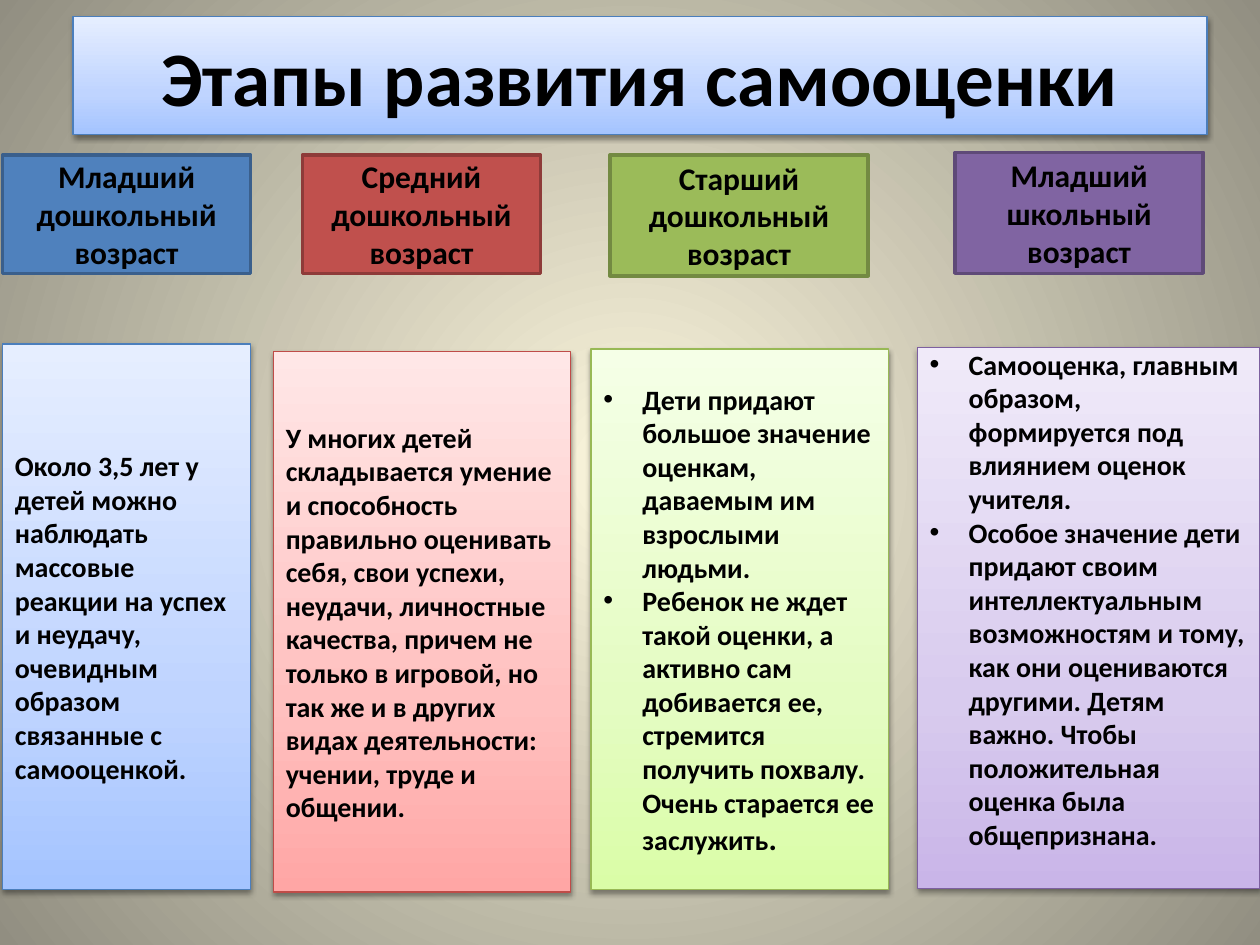
from lxml import etree
from pptx import Presentation
from pptx.dml.color import RGBColor
from pptx.enum.shapes import MSO_SHAPE
from pptx.enum.text import MSO_ANCHOR, PP_ALIGN
from pptx.oxml.ns import qn
from pptx.util import Inches, Pt

RECTANGLE = MSO_SHAPE.RECTANGLE
MIDDLE = MSO_ANCHOR.MIDDLE
CENTER = PP_ALIGN.CENTER
LEFT = PP_ALIGN.LEFT

FONT = "Calibri"
TITLE_ONLY = 5
BULLET_INDENT = Inches(0.31)
BLACK = RGBColor(0x00, 0x00, 0x00)
BLUE_EDGE = RGBColor(0x4B, 0x7E, 0xBC)


def color(value):
    return RGBColor.from_string(value)


BACKGROUND_STOPS = ((0, color("FCF7DD")), (100, color("918E81")))
BLUE_STOPS = ((0, color("A4C4FF")), (35, color("BFD4FF")), (100, color("E6EEFF")))
RED_STOPS = ((0, color("FFA6A5")), (35, color("FFC0BF")), (100, color("FFE7E7")))
GREEN_STOPS = ((0, color("DAFDA7")), (35, color("E4FCC2")), (100, color("F5FFE7")))
PURPLE_STOPS = ((0, color("C9B5E8")), (35, color("D8CBEE")), (100, color("F0EAF9")))

HEADERS = (
    ((0.02, 1.23, 1.97, 0.94), "Младший дошкольный возраст", color("4F81BD"), color("3A5F8C")),
    ((2.4, 1.23, 1.89, 0.94), "Средний дошкольный возраст", color("C0504D"), color("8E3B39")),
    ((4.84, 1.23, 2.05, 0.96), "Старший дошкольный возраст", color("9BBB59"), color("738A42")),
    ((7.58, 1.21, 1.97, 0.96), "Младший школьный возраст", color("8064A2"), color("5F4A78")),
)

YOUNGER_PRESCHOOL = (
    "Около 3,5 лет у детей можно наблюдать массовые реакции на успех и неудачу, "
    "очевидным образом связанные с самооценкой.",
)
MIDDLE_PRESCHOOL = (
    "У многих детей",
    "складывается умение и способность правильно оценивать себя, свои успехи, неудачи, "
    "личностные качества, причем не только в игровой, но так же и в других видах "
    "деятельности: учении, труде и общении.",
)
OLDER_PRESCHOOL = (
    "Дети придают большое значение оценкам, даваемым им взрослыми людьми.",
    "Ребенок не ждет такой оценки, а активно сам добивается ее, стремится получить "
    "похвалу. Очень старается ее заслужить",
)
YOUNGER_SCHOOL = (
    "Самооценка, главным образом, формируется под влиянием оценок учителя.",
    "Особое значение дети придают своим интеллектуальным возможностям и тому, как они "
    "оцениваются другими. Детям важно. Чтобы положительная оценка была общепризнана.",
)


def add_child(parent, tag, **attributes):
    return etree.SubElement(parent, qn(tag), {key: str(value) for key, value in attributes.items()})


def set_gradient(fill, container, stops, circular=False):
    fill.gradient()
    gradient = container.find(".//" + qn("a:gradFill"))
    for child in list(gradient):
        gradient.remove(child)
    stop_list = add_child(gradient, "a:gsLst")
    for position, stop_color in stops:
        stop = add_child(stop_list, "a:gs", pos=position * 1000)
        add_child(stop, "a:srgbClr", val=stop_color)
    if circular:
        path = add_child(gradient, "a:path", path="circle")
        add_child(path, "a:fillToRect", l=50000, t=50000, r=50000, b=50000)
    else:
        add_child(gradient, "a:lin", ang=270 * 60000, scaled=0)


def add_shadow(shape):
    effects = shape._element.spPr.find(qn("a:effectLst"))
    shadow = add_child(effects, "a:outerShdw", blurRad=Pt(3.1), dist=Pt(1.6),
                       dir=90 * 60000, rotWithShape=0)
    shadow_color = add_child(shadow, "a:srgbClr", val=BLACK)
    add_child(shadow_color, "a:alpha", val=38000)


def style_panel(shape, stops, edge):
    set_gradient(shape.fill, shape._element.spPr, stops)
    shape.line.color.rgb = edge
    shape.line.width = Pt(0.75)
    shape.shadow.inherit = False
    add_shadow(shape)


def add_rectangle(slide, box):
    shape = slide.shapes.add_shape(RECTANGLE, *map(Inches, box))
    shape.shadow.inherit = False
    return shape


def add_bullet(paragraph):
    properties = paragraph._p.get_or_add_pPr()
    properties.set("marL", str(BULLET_INDENT))
    properties.set("indent", str(-BULLET_INDENT))
    add_child(properties, "a:buFont", typeface="Arial")
    add_child(properties, "a:buChar", char="•")


def write_text(shape, texts, size, alignment=LEFT, bulleted=False):
    frame = shape.text_frame
    frame.word_wrap = True
    frame.vertical_anchor = MIDDLE
    frame.text = "\n".join(texts)
    for paragraph in frame.paragraphs:
        paragraph.alignment = alignment
        paragraph.font.name = FONT
        paragraph.font.size = Pt(size)
        paragraph.font.bold = True
        paragraph.font.color.rgb = BLACK
        if bulleted:
            add_bullet(paragraph)
    return frame


def add_title(slide):
    title = slide.shapes.title
    title.left, title.top, title.width, title.height = map(Inches, (0.58, 0.13, 9, 0.94))
    style_panel(title, BLUE_STOPS, BLUE_EDGE)
    write_text(title, ["Этапы развития самооценки"], 44, CENTER)


def add_panel(slide, box, texts, stops, edge, bulleted=False):
    panel = add_rectangle(slide, box)
    style_panel(panel, stops, edge)
    return write_text(panel, texts, 16, bulleted=bulleted)


def add_header(slide, box, text, fill_color, edge):
    header = add_rectangle(slide, box)
    header.fill.solid()
    header.fill.fore_color.rgb = fill_color
    header.line.color.rgb = edge
    header.line.width = Pt(2)
    write_text(header, [text], 18, CENTER)


def main():
    presentation = Presentation()
    presentation.slide_width = Inches(10)
    presentation.slide_height = Inches(7.5)
    slide = presentation.slides.add_slide(presentation.slide_layouts[TITLE_ONLY])
    set_gradient(slide.background.fill, slide._element, BACKGROUND_STOPS, circular=True)

    add_title(slide)
    add_panel(slide, (0.02, 2.73, 1.97, 4.33), YOUNGER_PRESCHOOL, BLUE_STOPS, BLUE_EDGE)
    add_panel(slide, (2.17, 2.79, 2.36, 4.29), MIDDLE_PRESCHOOL, RED_STOPS, color("BF4C48"))
    older_frame = add_panel(slide, (4.69, 2.77, 2.36, 4.29), OLDER_PRESCHOOL,
                            GREEN_STOPS, color("98B955"), bulleted=True)
    full_stop = older_frame.paragraphs[-1].add_run()
    full_stop.text = "."
    full_stop.font.size = Pt(18)
    school_frame = add_panel(slide, (7.28, 2.76, 2.72, 4.29), YOUNGER_SCHOOL,
                             PURPLE_STOPS, color("7D60A0"), bulleted=True)
    school_frame.margin_bottom = Inches(0.35)
    for header in HEADERS:
        add_header(slide, *header)

    presentation.save("out.pptx")


if __name__ == "__main__":
    main()
